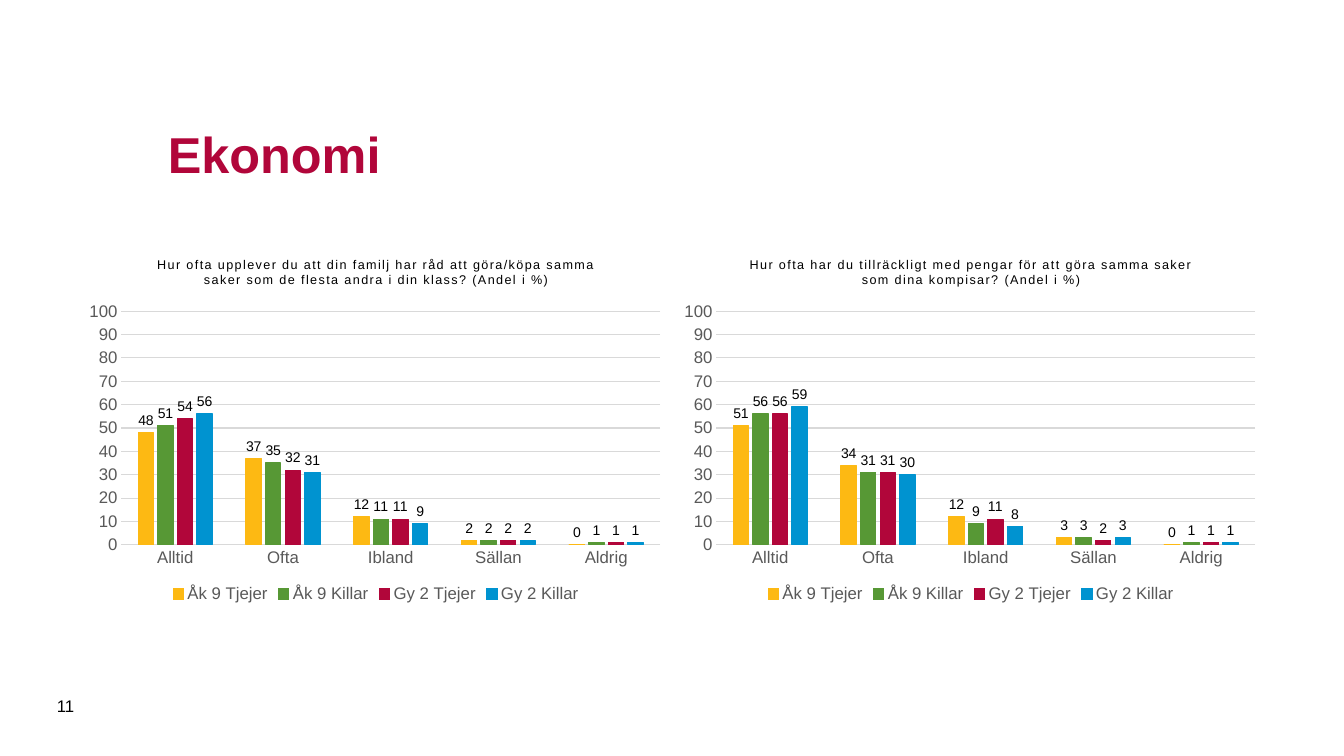
from lxml import etree
from pptx import Presentation
from pptx.chart.data import CategoryChartData
from pptx.dml.color import RGBColor
from pptx.enum.chart import (XL_CHART_TYPE, XL_LABEL_POSITION,
                             XL_LEGEND_POSITION, XL_TICK_MARK)
from pptx.enum.text import MSO_ANCHOR
from pptx.oxml.ns import qn
from pptx.util import Pt

COLUMNS = XL_CHART_TYPE.COLUMN_CLUSTERED
OUTSIDE = XL_LABEL_POSITION.OUTSIDE_END
BOTTOM = XL_LEGEND_POSITION.BOTTOM
NO_TICK = XL_TICK_MARK.NONE
MIDDLE = MSO_ANCHOR.MIDDLE

SCALE = 914400 / 100.8  # EMU per px
BLACK, GREY, PALE, RED = "000000", "595959", "D9D9D9", "B1063A"
NUMBER = "#,##0;#,##0"
ANSWERS = ["Alltid", "Ofta", "Ibland", "Sällan", "Aldrig"]
GROUPS = {"Åk 9 Tjejer": "FDB913", "Åk 9 Killar": "579835",
          "Gy 2 Tjejer": RED, "Gy 2 Killar": "0093D0"}
PLOT = {"x": 0.07, "y": 0.19, "w": 0.91, "h": 0.64}  # shares of the chart

CHARTS = [
    ("Hur ofta upplever du att din familj har råd att göra/köpa samma saker "
     "som de flesta andra i din klass? (Andel i %)",
     [[48, 37, 12, 2, 0], [51, 35, 11, 2, 1],
      [54, 32, 11, 2, 1], [56, 31, 9, 2, 1]]),
    ("Hur ofta har du tillräckligt med pengar för att göra samma saker som "
     "dina kompisar? (Andel i %)",
     [[51, 34, 12, 3, 0], [56, 31, 9, 3, 1],
      [56, 31, 11, 2, 1], [59, 30, 8, 3, 1]]),
]


def px(*sizes):
    return [round(size * SCALE) for size in sizes]


def paint(hue):
    return RGBColor.from_string(hue)


def assign(item, **values):
    for name, value in values.items():
        setattr(item, name, value)


def style(font, size, hue, bold=False):
    assign(font, name="Arial", size=Pt(size), bold=bold)
    font.color.rgb = paint(hue)


def rule(line, hue):
    line.color.rgb = paint(hue)
    line.width = Pt(0.75)


def add_text(slide, box, text, size, hue, bold=False):
    frame = slide.shapes.add_textbox(*px(*box)).text_frame
    assign(frame, word_wrap=True, vertical_anchor=MIDDLE)
    run = frame.paragraphs[0].add_run()
    run.text = text
    style(run.font, size, hue, bold)


def place_plot(chart):
    area = chart._chartSpace.chart.plotArea
    old = area.find(qn("c:layout"))
    if old is not None:
        area.remove(old)
    layout = etree.Element(qn("c:layout"))
    area.insert(0, layout)
    manual = etree.SubElement(layout, qn("c:manualLayout"))
    marks = {"layoutTarget": "inner", "xMode": "edge", "yMode": "edge", **PLOT}
    for name, value in marks.items():
        etree.SubElement(manual, qn("c:" + name)).set("val", str(value))


def add_title(chart, text):
    frame = chart.chart_title.text_frame
    run = frame.paragraphs[0].add_run()
    run.text = text
    style(run.font, 9, BLACK)
    run.font._element.set("spc", "100")
    chart.chart_title.include_in_layout = False


def style_axes(chart):
    for axis in (chart.category_axis, chart.value_axis):
        assign(axis, major_tick_mark=NO_TICK, minor_tick_mark=NO_TICK)
        style(axis.tick_labels.font, 12, GREY)
    rule(chart.category_axis.format.line, PALE)
    scale = chart.value_axis
    assign(scale, minimum_scale=0, maximum_scale=100, major_unit=10)
    assign(scale.tick_labels, number_format=NUMBER,
           number_format_is_linked=False)
    scale.format.line.fill.background()
    rule(scale.major_gridlines.format.line, PALE)


def style_bars(plot):
    assign(plot, gap_width=219, overlap=-27, vary_by_categories=False)
    for bars, hue in zip(plot.series, GROUPS.values()):
        bars.format.fill.solid()
        bars.format.fill.fore_color.rgb = paint(hue)
        rule(bars.format.line, hue)
        labels = bars.data_labels
        assign(labels, show_value=True, position=OUTSIDE,
               number_format=NUMBER, number_format_is_linked=False)
        style(labels.font, 10, BLACK)


def add_bars(slide, box, title, rows):
    data = CategoryChartData()
    data.categories = ANSWERS
    for name, row in zip(GROUPS, rows):
        data.add_series(name, row)
    chart = slide.shapes.add_chart(COLUMNS, *px(*box), data).chart
    style(chart.font, 10, BLACK)
    add_title(chart, title)
    style_axes(chart)
    style_bars(chart.plots[0])
    chart.has_legend = True
    assign(chart.legend, position=BOTTOM, include_in_layout=False)
    style(chart.legend.font, 12, GREY)
    place_plot(chart)


def main():
    deck = Presentation()
    deck.slide_width, deck.slide_height = px(1344, 756)
    slide = deck.slides.add_slide(deck.slide_layouts[6])

    # Heading and page number
    add_text(slide, (158, 82, 1032, 143), "Ekonomi", 36, RED, bold=True)
    add_text(slide, (47, 686, 57, 40), "11", 12, BLACK)

    # Two charts side by side
    for spot, (title, rows) in enumerate(CHARTS):
        add_bars(slide, (80 + 595 * spot, 242, 592, 365), title, rows)

    deck.save("out.pptx")


if __name__ == "__main__":
    main()
